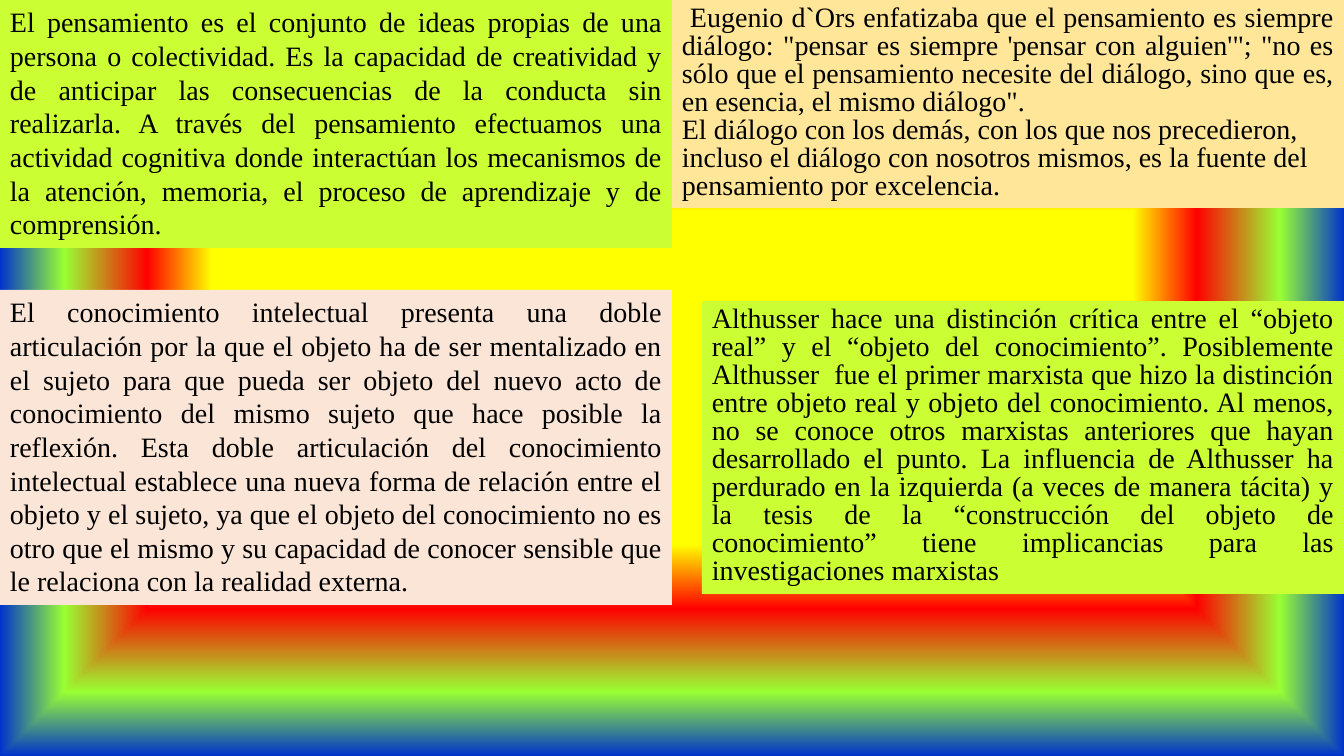
from dataclasses import dataclass

from pptx import Presentation
from pptx.dml.color import RGBColor
from pptx.enum.text import MSO_AUTO_SIZE, PP_ALIGN
from pptx.oxml import parse_xml
from pptx.oxml.ns import nsdecls
from pptx.util import Emu, Pt

JUSTIFY, LEFT = PP_ALIGN.JUSTIFY, PP_ALIGN.LEFT
GROW = MSO_AUTO_SIZE.SHAPE_TO_FIT_TEXT
WIDTH, HEIGHT = 1344, 756
HALF = WIDTH // 2
EMU_PER_PX = 12192000 / WIDTH


@dataclass(frozen=True)
class Theme:
    font: str = "Times New Roman"
    size: int = 20
    tight: int = 20
    text: str = "000000"
    lime: str = "CCFF33"
    sand: str = "FFE699"
    blush: str = "FBE5D6"
    rainbow: tuple = ((44, "FFFF00"), (61, "FF0000"), (83, "99FF33"), (100, "0033CC"))


def px(n):
    return Emu(round(n * EMU_PER_PX))


class SlideBuilder:
    def __init__(self, slide, theme):
        self.slide, self.theme = slide, theme

    def background(self, stops):
        """Rectangular gradient spreading from the slide's centre."""
        self.slide.background.fill.gradient()
        old = self.slide.element.xpath(".//p:bgPr/a:gradFill")[0]
        gs = "".join(f'<a:gs pos="{pos * 1000}"><a:srgbClr val="{color}"/></a:gs>'
                     for pos, color in stops)
        new = parse_xml(
            f'<a:gradFill {nsdecls("a")} rotWithShape="1"><a:gsLst>{gs}</a:gsLst>'
            '<a:path path="rect"><a:fillToRect l="50000" t="50000" r="50000" b="50000"/>'
            '</a:path></a:gradFill>')
        old.getparent().replace(old, new)

    def text_panel(self, x, y, w, h, fill, paragraphs, spacing=None):
        """Filled text box; paragraphs are (alignment, text) pairs."""
        sp = self.slide.shapes.add_textbox(px(x), px(y), px(w), px(h))
        sp.fill.solid()
        sp.fill.fore_color.rgb = RGBColor.from_string(fill)
        tf = sp.text_frame
        tf.word_wrap = True
        tf.auto_size = GROW
        for i, (align, text) in enumerate(paragraphs):
            p = tf.add_paragraph() if i else tf.paragraphs[0]
            p.alignment = align
            if spacing:
                p.line_spacing = Pt(spacing)
            r = p.add_run()
            r.text = text
            r.font.name = self.theme.font
            r.font.size = Pt(self.theme.size)
            r.font.color.rgb = RGBColor.from_string(self.theme.text)


THOUGHT = [(JUSTIFY, (
    "El pensamiento es el conjunto de ideas propias de una persona o colectividad. "
    "Es la capacidad de creatividad y de anticipar las consecuencias de la conducta "
    "sin realizarla. A través del pensamiento efectuamos una actividad cognitiva "
    "donde interactúan los mecanismos de la atención, memoria, el proceso de "
    "aprendizaje y de comprensión."))]

DIALOGUE = [
    (JUSTIFY, (
        " Eugenio d`Ors enfatizaba que el pensamiento es siempre diálogo: "
        "\"pensar es siempre 'pensar con alguien'\"; \"no es sólo que el pensamiento "
        "necesite del diálogo, sino que es, en esencia, el mismo diálogo\".")),
    (LEFT, (
        "El diálogo con los demás, con los que nos precedieron, incluso el diálogo "
        "con nosotros mismos, es la fuente del pensamiento por excelencia.")),
]

KNOWLEDGE = [(JUSTIFY, (
    "El conocimiento intelectual presenta una doble articulación por la que el "
    "objeto ha de ser mentalizado en el sujeto para que pueda ser objeto del nuevo "
    "acto de conocimiento del mismo sujeto que hace posible la reflexión. Esta doble "
    "articulación del conocimiento intelectual establece una nueva forma de relación "
    "entre el objeto y el sujeto, ya que el objeto del conocimiento no es otro que el "
    "mismo y su capacidad de conocer sensible que le relaciona con la realidad "
    "externa."))]

ALTHUSSER = [(JUSTIFY, (
    "Althusser hace una distinción crítica entre el “objeto real” y el “objeto del "
    "conocimiento”. Posiblemente Althusser  fue el primer marxista que hizo la "
    "distinción entre objeto real y objeto del conocimiento. Al menos, no se conoce "
    "otros marxistas anteriores que hayan desarrollado el punto. La influencia de "
    "Althusser ha perdurado en la izquierda (a veces de manera tácita) y la tesis de "
    "la “construcción del objeto de conocimiento” tiene implicancias para las "
    "investigaciones marxistas"))]


def main():
    prs = Presentation()
    prs.slide_width, prs.slide_height = px(WIDTH), px(HEIGHT)
    theme = Theme()
    s = SlideBuilder(prs.slides.add_slide(prs.slide_layouts[6]), theme)

    # Background
    s.background(theme.rainbow)

    # Top row
    s.text_panel(0, 0, HALF, 248, theme.lime, THOUGHT)
    s.text_panel(HALF, 0, HALF, 208, theme.sand, DIALOGUE, theme.tight)

    # Bottom row
    s.text_panel(0, 290, HALF, 315, theme.blush, KNOWLEDGE)
    s.text_panel(702, 301, WIDTH - 702, 293, theme.lime, ALTHUSSER, theme.tight)

    prs.save("out.pptx")


if __name__ == "__main__":
    main()
